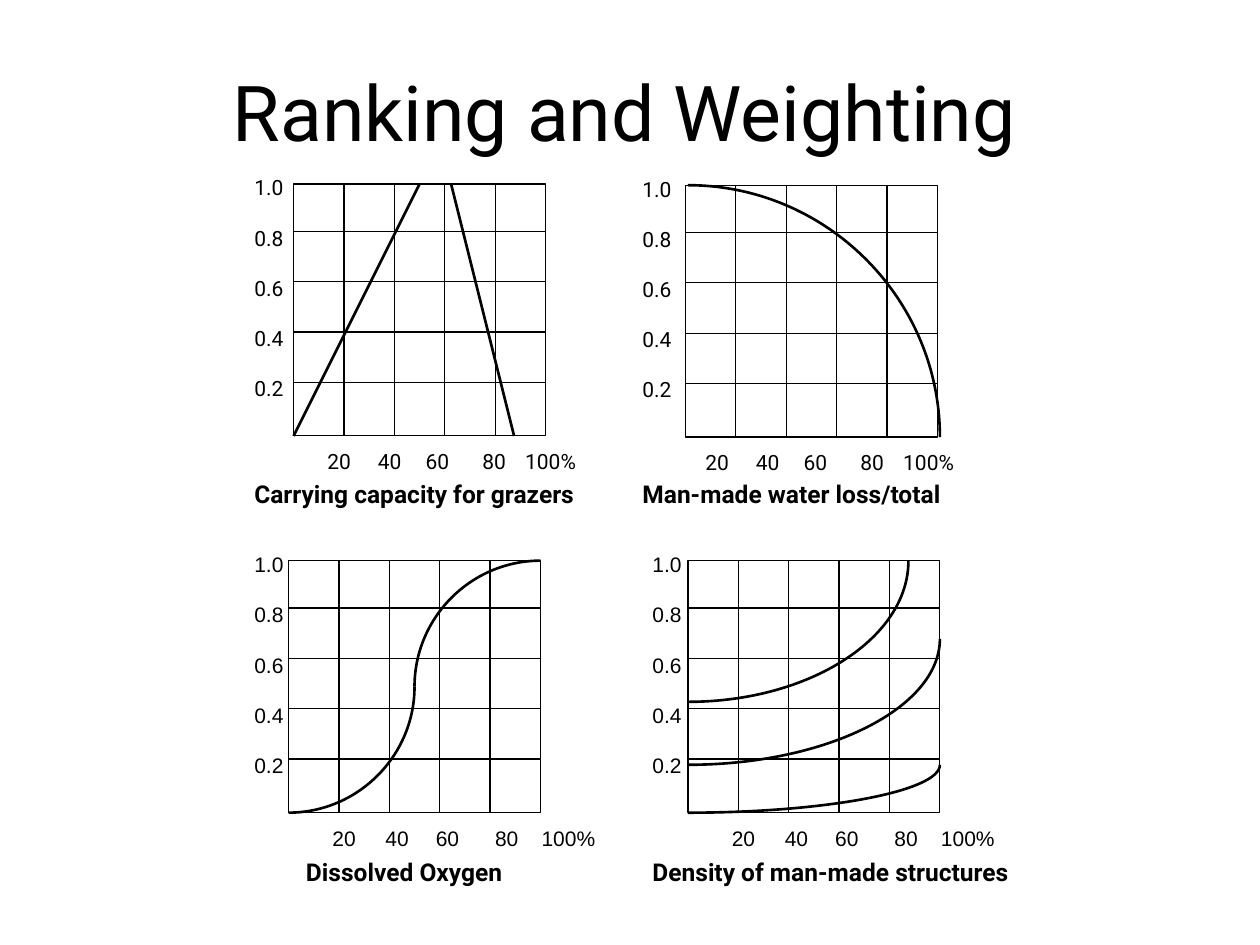
from lxml import etree
from pptx import Presentation
from pptx import util as u
from pptx.dml.color import RGBColor
from pptx.enum import shapes, text
from pptx.oxml import ns

IN = u.Inches
BLACK, WHITE = "000000", "FFFFFF"
SIZE = 2  # side of every plot
STEP = 0.4  # grid pitch
BEND = 0.55  # handle length that makes a quarter ellipse
ROBOTO_TABS = (0.4, 0.78, 1.23, 1.57)
ARIAL_TABS = (0.42, 0.82, 1.29, 1.66)


def color(code):
    return RGBColor.from_string(code)


def add_run(par, words, font, size, bold=False):
    run = par.add_run()
    run.text = words
    run.font.name = font
    run.font.size = u.Pt(size)
    run.font.bold = bold
    run.font.color.rgb = color(BLACK)


def add_rect(home, x, y, w, h, edge=None):
    rect = home.add_shape(shapes.MSO_SHAPE.RECTANGLE, IN(x), IN(y), IN(w), IN(h))
    rect.shadow.inherit = False
    rect.fill.solid()
    rect.fill.fore_color.rgb = color(WHITE)
    if edge:
        rect.line.color.rgb = color(edge)
        rect.line.width = u.Pt(0.75)
    else:
        rect.line.fill.background()
    frame = rect.text_frame
    frame.vertical_anchor = text.MSO_ANCHOR.TOP
    frame.paragraphs[0].alignment = text.PP_ALIGN.LEFT
    return rect


def add_line(home, x1, y1, x2, y2, width=0.75):
    line = home.add_connector(
        shapes.MSO_CONNECTOR.STRAIGHT, IN(x1), IN(y1), IN(x2), IN(y2))
    line.line.color.rgb = color(BLACK)
    line.line.width = u.Pt(width)
    etree.SubElement(line._element.spPr, ns.qn("a:effectLst"))


def add_curve(home, x1, y1, x2, y2):
    """Quarter ellipse: level at its first point, upright at its last."""
    form = home.build_freeform(IN(x1), IN(y1))
    form.add_line_segments([(IN(x2), IN(y2))], close=False)
    curve = form.convert_to_shape()
    # Turn the straight segment into one Bezier segment
    left, top = min(x1, x2), min(y1, y2)
    line = next(curve._element.iter(ns.qn("a:lnTo")))
    line.tag = ns.qn("a:cubicBezTo")
    bends = ((x1 + BEND * (x2 - x1), y1), (x2, y2 + BEND * (y1 - y2)))
    for i, (x, y) in enumerate(bends):
        dot = etree.Element(ns.qn("a:pt"), x=str(IN(x - left)), y=str(IN(y - top)))
        line.insert(i, dot)
    curve.shadow.inherit = False
    curve.fill.background()
    curve.line.color.rgb = color(BLACK)
    curve.line.width = u.Pt(1.5)


def add_scale(home, x, y, font):
    """Value labels, one paragraph per grid row."""
    frame = add_rect(home, x, y, 0.5, 2).text_frame
    for i, label in enumerate(("1.0", "0.8", "0.6", "0.4", "0.2")):
        par = frame.add_paragraph() if i else frame.paragraphs[0]
        par.alignment = text.PP_ALIGN.LEFT
        par.space_after = u.Pt(14.25)
        add_run(par, label, font, 12)


def add_ticks(home, x, y, w, font, stops):
    """Percent labels, set apart by tab stops."""
    frame = add_rect(home, x, y, w, 0.25).text_frame
    frame.word_wrap = False
    par = frame.paragraphs[0]
    tabs = etree.SubElement(par._p.get_or_add_pPr(), ns.qn("a:tabLst"))
    for stop in stops:
        etree.SubElement(tabs, ns.qn("a:tab"), pos=str(IN(stop)), algn="l")
    add_run(par, "20\t40\t60\t80\t100%", font, 12)


def add_grid(home, x, y):
    add_rect(home, x, y, SIZE, SIZE, BLACK)
    for i in range(4):
        row = y + 3 / 8 + i * STEP
        add_line(home, x, row, x + SIZE, row)
    for i in range(1, 5):
        col = x + i * STEP
        add_line(home, col, y, col, y + SIZE)


def add_name(home, x, y, w, words):
    box = home.add_textbox(IN(x), IN(y), IN(w), IN(0.33))
    box.text_frame.word_wrap = True
    add_run(box.text_frame.paragraphs[0], words, "Roboto", 14, True)


def add_panel(slide, x, y, left, tick, wide, font, stops, name, lines=(), arcs=()):
    """Plot at x, y; line and arc points count from its top left corner."""
    home = slide.shapes.add_group_shape().shapes
    add_scale(home, left, y - 0.12, font)
    add_grid(home, x, y)
    add_ticks(home, tick, y + 2.05, wide, font, stops)
    for x1, y1, x2, y2 in lines:
        add_line(home, x + x1, y + y1, x + x2, y + y2, 1.5)
    for x1, y1, x2, y2 in arcs:
        add_curve(home, x + x1, y + y1, x + x2, y + y2)
    add_name(slide.shapes, *name)


def add_title(slide):
    title = slide.shapes.title
    title.left, title.top = IN(0.67), IN(0.25)
    title.width, title.height = IN(8.58), IN(1.25)
    title.text_frame.vertical_anchor = text.MSO_ANCHOR.MIDDLE
    par = title.text_frame.paragraphs[0]
    par.alignment = text.PP_ALIGN.CENTER
    add_run(par, "Ranking and Weighting", "Roboto", 44)


def main():
    deck = Presentation()
    deck.slide_width, deck.slide_height = IN(10), IN(7.5)
    slide = deck.slides.add_slide(deck.slide_layouts[5])
    add_title(slide)

    # Top row
    add_panel(slide, 2.33, 1.46, 1.92, 2.5, 2.4, "Roboto", ROBOTO_TABS,
              (1.92, 3.75, 3.17, "Carrying capacity for grazers"),
              lines=((0, 2, 1, 0), (1, 0, 1.25, 0), (1.25, 0, 1.75, 2)))
    add_panel(slide, 5.44, 1.47, 5, 5.5, 2.79, "Roboto", ROBOTO_TABS,
              (5, 3.75, 3, "Man-made water loss/total"),
              arcs=((0.02, 0, 2.02, 2),))

    # Bottom row
    add_panel(slide, 2.29, 4.45, 1.92, 2.54, 2.38, "Arial", ARIAL_TABS,
              (2.33, 6.75, 2.08, "Dissolved Oxygen"),
              arcs=((0, 2, 1, 1), (2, 0, 1, 1)))
    add_panel(slide, 5.46, 4.45, 5.08, 5.71, 2.38, "Arial", ARIAL_TABS,
              (5.08, 6.75, 3.5, "Density of man-made structures"),
              arcs=((0, 1.62, 2, 0.62), (0, 1.12, 1.75, 0), (0, 2, 2, 1.62)))

    deck.save("out.pptx")


if __name__ == "__main__":
    main()
